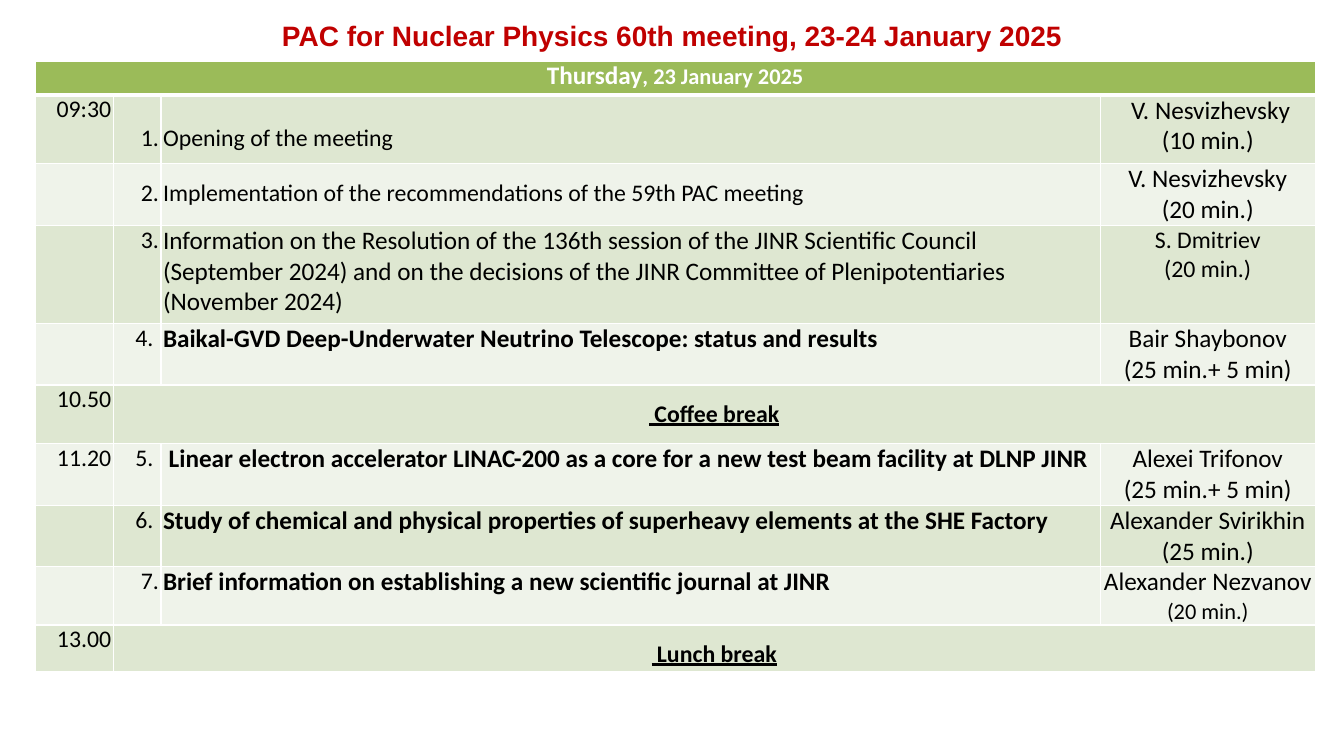
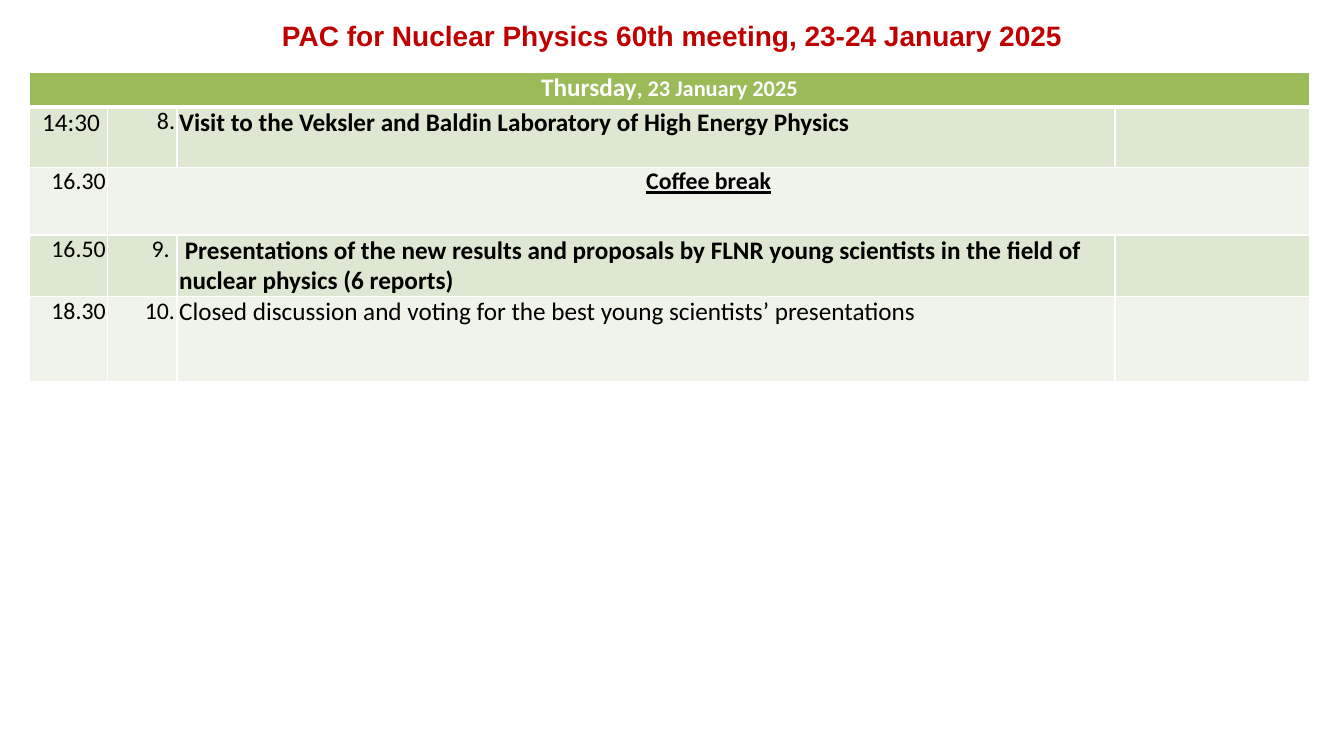
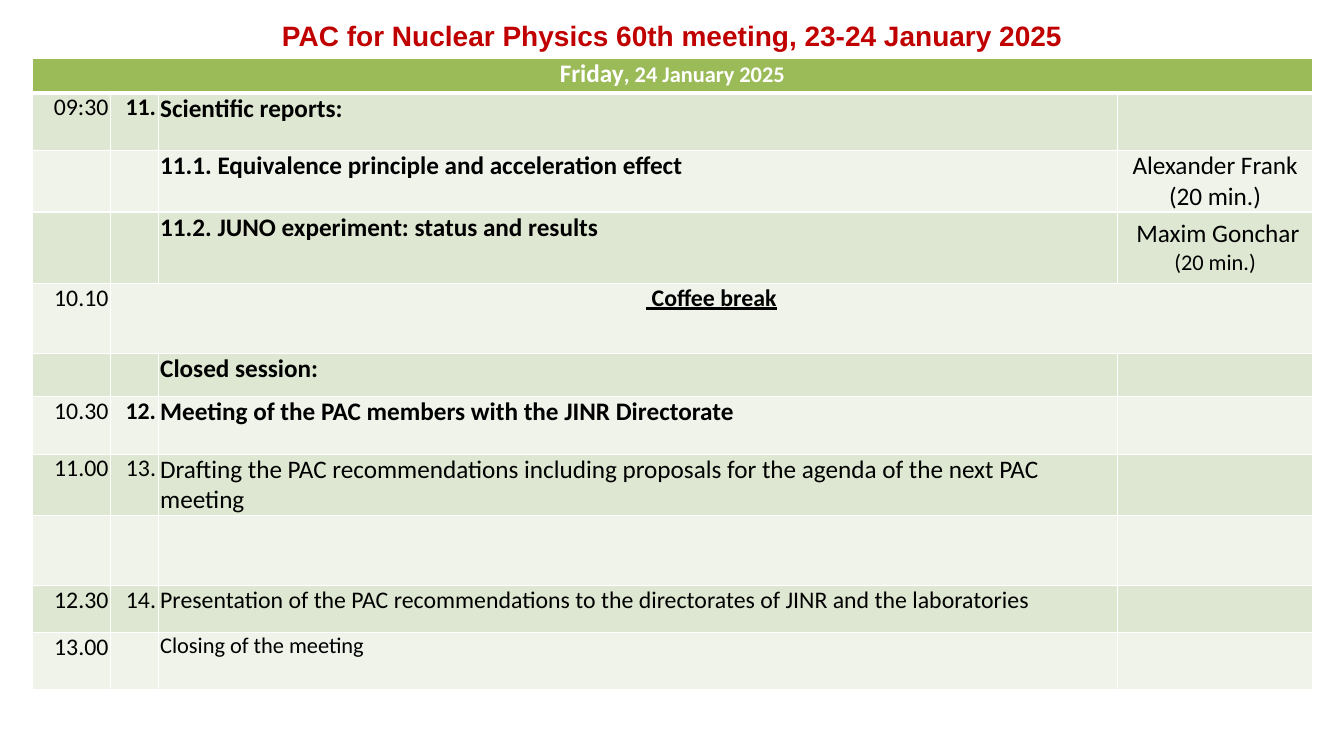
from dataclasses import dataclass
from typing import Sequence

from lxml.etree import SubElement
from pptx import Presentation
from pptx.dml.color import RGBColor
from pptx.enum.text import MSO_ANCHOR as Anchor, MSO_AUTO_SIZE as AutoSize, PP_ALIGN as Align
from pptx.oxml.ns import qn
from pptx.util import Pt

TITLE = "PAC for Nuclear Physics 60th meeting, 23-24 January 2025"
TITLE_COLOUR = "C00000"
HEADER_FILL = "9BBB59"
BAND_FILLS = ("DEE7D1", "EFF3EA")
BLACK = "000000"
WHITE = "FFFFFF"
TABLE_WIDTH = 914.5
HEADER_HEIGHT = 24.5
SIDE_MARGIN = 1.5
TITLE_ONLY_LAYOUT = 5


@dataclass(frozen=True)
class Run:
    text: str
    size: float = 17
    bold: bool = False
    underline: bool = False


@dataclass(frozen=True)
class Entry:
    """A row of the agenda; each run of the speaker is a line of its own."""
    height: float
    time: str = ""
    number: str = ""
    topic: Run = Run("")
    speaker: tuple[Run, ...] = ()
    line_spacing: float = 1
    speaker_anchor: Anchor = Anchor.MIDDLE
    time_size: float = 17
    number_bold: bool = False


@dataclass(frozen=True)
class Break:
    height: float
    time: str
    label: str
    line_spacing: float = 1


@dataclass(frozen=True)
class Agenda:
    left: float
    top: float
    weekday: str
    date: str
    time_width: float
    number_width: float
    speaker_width: float
    rows: tuple[Entry | Break, ...]


def heading(text: str) -> Run:
    return Run(text, 18, bold=True)


def speaker(name: str, duration: str, name_size: float = 18, duration_size: float = 18) -> tuple[Run, ...]:
    return Run(name, name_size), Run(duration, duration_size)


AGENDAS = (
    Agenda(25, 43.5, "Thursday", ", 23 January 2025", 56, 34, 153.5, (
        Entry(49, "09:30", "1.", Run("Opening of the meeting"),
              speaker(" V. Nesvizhevsky", "(10 min.)"), 2, Anchor.TOP),
        Entry(44, "", "2.", Run("Implementation of the recommendations of the 59th PAC meeting"),
              speaker("V. Nesvizhevsky", "(20 min.)"), 1.5, Anchor.TOP),
        Entry(70, "", "3.", Run("Information on the Resolution of the 136th session of the JINR "
                                "Scientific Council (September 2024) and on the decisions of the "
                                "JINR Committee of Plenipotentiaries (November 2024)", 18),
              speaker("S. Dmitriev", "(20 min.)", 17, 17), speaker_anchor=Anchor.TOP),
        Entry(44, "", "4. ", heading("Baikal-GVD Deep-Underwater Neutrino Telescope: status and results"),
              speaker("Bair Shaybonov", "(25 min.+ 5 min)")),
        Break(42, "10.50", " Coffee break", 1.5),
        Entry(44, "11.20", "5. ", heading(" Linear electron accelerator LINAC-200 as a core for a new "
                                          "test beam facility at DLNP JINR"),
              speaker("Alexei Trifonov", "(25 min.+ 5 min)")),
        Entry(44, "", "6. ", heading("Study of chemical and physical properties of superheavy elements "
                                     "at the SHE Factory"),
              speaker("Alexander Svirikhin", "(25 min.)")),
        Entry(41.5, "", "7.", heading("Brief information on establishing a new scientific journal at JINR"),
              speaker("Alexander Nezvanov", "(20 min.)", duration_size=16)),
        Break(33, "13.00", " Lunch break", 1.5),
    )),
    Agenda(21, 52, "Thursday", ", 23 January 2025", 56, 49.5, 139, (
        Entry(43, "14:30 ", "8.", heading("Visit to the Veksler and Baldin Laboratory of High Energy Physics"),
              time_size=18),
        Break(48.5, "16.30", "Coffee break"),
        Entry(44, "16.50", "9. ", heading(" Presentations of the new results and proposals by FLNR young "
                                          "scientists in the field of nuclear physics (6 reports)")),
        Entry(61, "18.30", "10.", Run("Closed discussion and voting for the best young scientists’ "
                                      "presentations", 18)),
    )),
    Agenda(23, 42, "Friday", ", 24 January 2025", 56, 34, 139, (
        Entry(41, "09:30", "11.", heading("Scientific reports:"), number_bold=True),
        Entry(44, topic=heading("11.1. Equivalence principle and acceleration effect"),
              speaker=speaker("Alexander Frank", "(20 min.)")),
        Entry(51, topic=heading("11.2. JUNO experiment: status and results"),
              speaker=speaker(" Maxim Gonchar", "(20 min.)", duration_size=16)),
        Break(50, "10.10", " Coffee break"),
        Entry(31, topic=heading("Closed session:")),
        Entry(41, "10.30", "12.", heading("Meeting of the PAC members with the JINR Directorate"),
              number_bold=True),
        Entry(44, "11.00", "13.", Run("Drafting the PAC recommendations including proposals for the "
                                      "agenda of the next PAC meeting", 18)),
        Entry(50, ),
        Entry(33.5, "12.30", "14.", Run("Presentation of the PAC recommendations to the directorates of "
                                        "JINR and the laboratories")),
        Entry(40.5, "13.00", topic=Run("Closing of the meeting", 16)),
    )),
)


def set_colour(target, colour: str) -> None:
    """Colour a fill or a font with a hex string."""
    if hasattr(target, "solid"):
        target.solid()
        target.fore_color.rgb = RGBColor.from_string(colour)
    else:
        target.color.rgb = RGBColor.from_string(colour)


def add_runs(paragraph, runs: Sequence[Run], colour: str) -> None:
    for item in runs:
        run = paragraph.add_run()
        run.text = item.text
        font = run.font
        font.name, font.size = "Calibri", Pt(item.size)
        font.bold, font.underline = item.bold, item.underline
        set_colour(font, colour)


def write_cell(cell, lines: Sequence[Sequence[Run]], align: Align, line_spacing: float = 1,
               colour: str = BLACK) -> None:
    frame = cell.text_frame
    for index, runs in enumerate(lines):
        paragraph = frame.add_paragraph() if index else frame.paragraphs[0]
        paragraph.alignment = align
        paragraph.line_spacing = line_spacing
        add_runs(paragraph, [run for run in runs if run.text], colour)


def style_row(cells: Sequence, fill: str, top_width: float, bottom_width: float) -> None:
    """Give the cells of a row their fill, margins and white borders."""
    widths = {"a:lnL": 1, "a:lnR": 1, "a:lnT": top_width, "a:lnB": bottom_width}
    for cell in cells:
        cell.margin_left = cell.margin_right = Pt(SIDE_MARGIN)
        cell.margin_top = cell.margin_bottom = Pt(0)
        properties = cell._tc.get_or_add_tcPr()
        for tag, width in widths.items():
            line = SubElement(properties, qn(tag), w=str(Pt(width)))
            SubElement(SubElement(line, qn("a:solidFill")), qn("a:srgbClr"), val=WHITE)
        set_colour(cell.fill, fill)


def write_row(cells: Sequence, row: Entry | Break) -> None:
    time_cell, number_cell, topic_cell, speaker_cell = cells
    if isinstance(row, Break):
        write_cell(time_cell, [[Run(row.time)]], Align.RIGHT)
        number_cell.merge(speaker_cell)
        label = Run(row.label, bold=True, underline=True)
        write_cell(number_cell, [[label]], Align.CENTER, row.line_spacing)
        return
    write_cell(time_cell, [[Run(row.time, row.time_size)]], Align.RIGHT)
    write_cell(number_cell, [[Run(row.number, bold=row.number_bold)]], Align.RIGHT, row.line_spacing)
    write_cell(topic_cell, [[row.topic]], Align.LEFT, row.line_spacing)
    write_cell(speaker_cell, [[line] for line in row.speaker], Align.CENTER)
    speaker_cell.margin_left = speaker_cell.margin_right = Pt(0)
    speaker_cell.vertical_anchor = row.speaker_anchor


def add_agenda(slide, agenda: Agenda) -> None:
    heights = [HEADER_HEIGHT] + [row.height for row in agenda.rows]
    topic_width = TABLE_WIDTH - agenda.time_width - agenda.number_width - agenda.speaker_width
    widths = (agenda.time_width, agenda.number_width, topic_width, agenda.speaker_width)
    table = slide.shapes.add_table(len(heights), len(widths), Pt(agenda.left), Pt(agenda.top),
                                   Pt(TABLE_WIDTH), Pt(sum(heights))).table
    table.first_row = table.horz_banding = False
    for column, width in zip(table.columns, widths):
        column.width = Pt(width)
    for table_row, height in zip(table.rows, heights):
        table_row.height = Pt(height)

    header, *body = [list(table_row.cells) for table_row in table.rows]
    style_row(header, HEADER_FILL, 1, 3)
    header[0].merge(header[-1])
    day = [heading(agenda.weekday), Run(agenda.date, 16, bold=True)]
    write_cell(header[0], [day], Align.CENTER, colour=WHITE)
    for index, (cells, row) in enumerate(zip(body, agenda.rows)):
        style_row(cells, BAND_FILLS[index % 2], 1 if index else 3, 1)
        write_row(cells, row)


def set_title(slide) -> None:
    title = slide.shapes.title
    title.left, title.top, title.width, title.height = Pt(23), Pt(9.5), Pt(TABLE_WIDTH), Pt(31.5)
    frame = title.text_frame
    frame.text = TITLE
    frame.auto_size = AutoSize.NONE
    frame.vertical_anchor = Anchor.TOP
    paragraph = frame.paragraphs[0]
    paragraph.alignment = Align.CENTER
    font = paragraph.runs[0].font
    font.name, font.size, font.bold = "Arial", Pt(20), True
    set_colour(font, TITLE_COLOUR)


def main() -> None:
    presentation = Presentation()
    presentation.slide_width, presentation.slide_height = Pt(960), Pt(540)
    for agenda in AGENDAS:
        slide = presentation.slides.add_slide(presentation.slide_layouts[TITLE_ONLY_LAYOUT])
        set_title(slide)
        add_agenda(slide, agenda)
    presentation.save("out.pptx")


if __name__ == "__main__":
    main()
